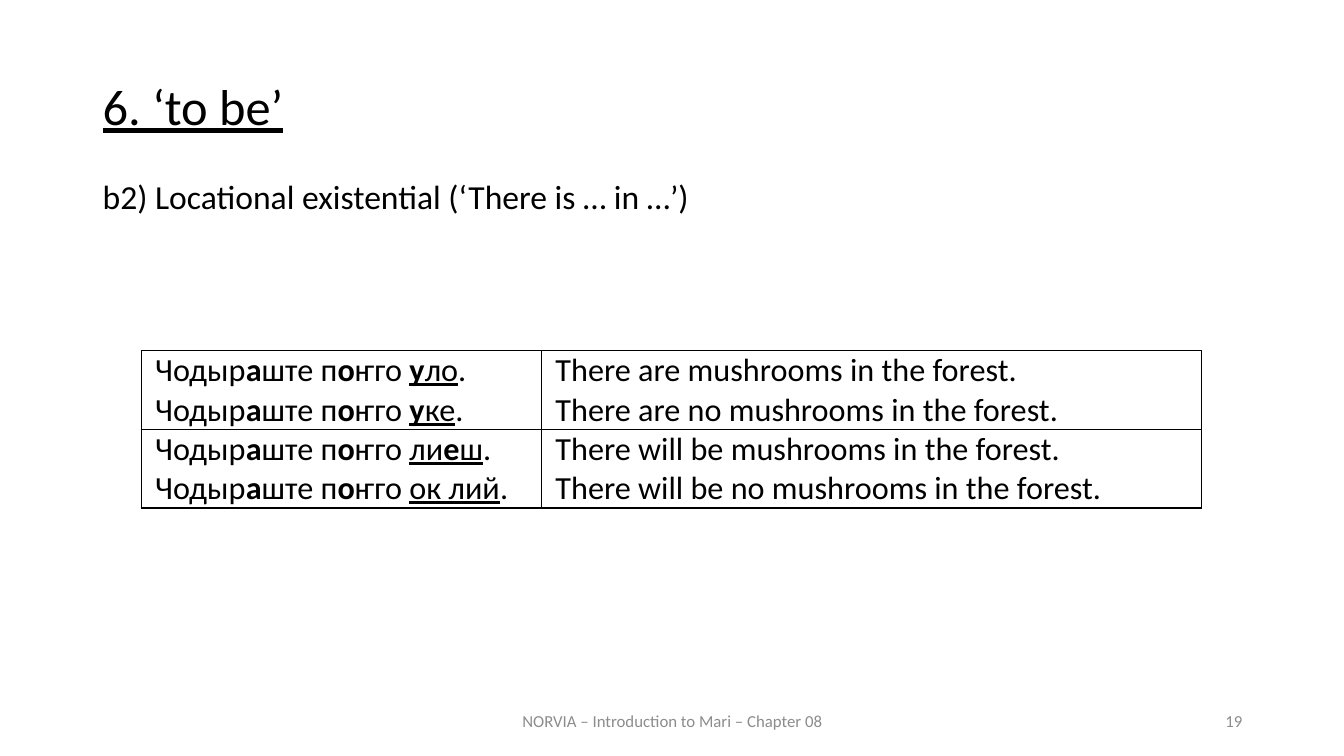
from lxml.etree import SubElement
from pptx import Presentation
from pptx.dml.color import RGBColor
from pptx.enum.text import MSO_ANCHOR, PP_ALIGN
from pptx.oxml.ns import qn
from pptx.util import Pt

EMU_PER_PX = 9144
BLACK = RGBColor(0x00, 0x00, 0x00)
GREY = RGBColor(0x8C, 0x8C, 0x8C)
FONT = "Calibri"
BORDER_WIDTH = Pt(1)

STEM = "Чодыр*а*ште п*о*ҥго "
EXAMPLES = [
    [
        [STEM + "_*у*ло_.", STEM + "_*у*ке_."],
        ["There are mushrooms in the forest.",
         "There are no mushrooms in the forest."],
    ],
    [
        [STEM + "_ли*е*ш_.", STEM + "_ок лий_."],
        ["There will be mushrooms in the forest.",
         "There will be no mushrooms in the forest."],
    ],
]
COLUMN_WIDTHS = [397, 655]
ROW_HEIGHT = 78


def px(length):
    return length * EMU_PER_PX


def style_font(paragraph, size, color):
    paragraph.font.name = FONT
    paragraph.font.size = Pt(size)
    paragraph.font.color.rgb = color


def add_text(slide, box, text, size, color=BLACK, align=PP_ALIGN.LEFT,
             anchor=MSO_ANCHOR.TOP):
    frame = slide.shapes.add_textbox(*map(px, box)).text_frame
    frame.word_wrap = True
    frame.vertical_anchor = anchor
    paragraph = frame.paragraphs[0]
    paragraph.text = text
    paragraph.alignment = align
    style_font(paragraph, size, color)
    return paragraph


def add_marked_runs(paragraph, marked):
    """Underscores enclose underlined text, asterisks bold text."""
    for underline, part in enumerate(marked.split("_")):
        for bold, piece in enumerate(part.split("*")):
            if piece:
                run = paragraph.add_run()
                run.text = piece
                if underline % 2:
                    run.font.underline = True
                if bold % 2:
                    run.font.bold = True


def add_borders(cell):
    properties = cell._tc.get_or_add_tcPr()
    for side in ("a:lnL", "a:lnR", "a:lnT", "a:lnB"):
        line = SubElement(properties, qn(side), w=str(BORDER_WIDTH))
        fill = SubElement(line, qn("a:solidFill"))
        SubElement(fill, qn("a:srgbClr"), val=str(BLACK))


def fill_cell(cell, sentences):
    cell.margin_left = cell.margin_right = px(14)
    cell.margin_top = cell.margin_bottom = 0
    cell.vertical_anchor = MSO_ANCHOR.MIDDLE
    add_borders(cell)
    cell.fill.background()
    frame = cell.text_frame
    for index, sentence in enumerate(sentences):
        paragraph = frame.add_paragraph() if index else frame.paragraphs[0]
        style_font(paragraph, 23, BLACK)
        add_marked_runs(paragraph, sentence)


def add_examples(slide, left, top):
    examples = slide.shapes.add_table(
        len(EXAMPLES), len(COLUMN_WIDTHS), px(left), px(top),
        px(sum(COLUMN_WIDTHS)), px(ROW_HEIGHT * len(EXAMPLES))).table
    examples.first_row = examples.horz_banding = False
    for column, width in zip(examples.columns, COLUMN_WIDTHS):
        column.width = px(width)
    for row, contents in zip(examples.rows, EXAMPLES):
        row.height = px(ROW_HEIGHT)
        for cell, sentences in zip(row.cells, contents):
            fill_cell(cell, sentences)


def main():
    presentation = Presentation()
    presentation.slide_width = px(1333)
    presentation.slide_height = px(750)
    slide = presentation.slides.add_slide(presentation.slide_layouts[6])

    heading = add_text(slide, (92, 76, 1150, 83), "6. ‘to be’", 36,
                       align=PP_ALIGN.JUSTIFY)
    heading.font.underline = True
    heading.space_before = Pt(12)
    heading.line_spacing = 0.9

    subheading = add_text(slide, (92, 174, 1150, 133),
                          "b2) Locational existential (‘There is … in …’)", 24)
    subheading.space_before = Pt(10)
    subheading.line_spacing = 0.9

    add_examples(slide, 140, 348)

    add_text(slide, (442, 695, 450, 40),
             "NORVIA – Introduction to Mari – Chapter 08", 12, GREY,
             PP_ALIGN.CENTER, MSO_ANCHOR.MIDDLE)
    add_text(slide, (942, 695, 300, 40), "19", 12, GREY,
             PP_ALIGN.RIGHT, MSO_ANCHOR.MIDDLE)

    presentation.save("out.pptx")


if __name__ == "__main__":
    main()
